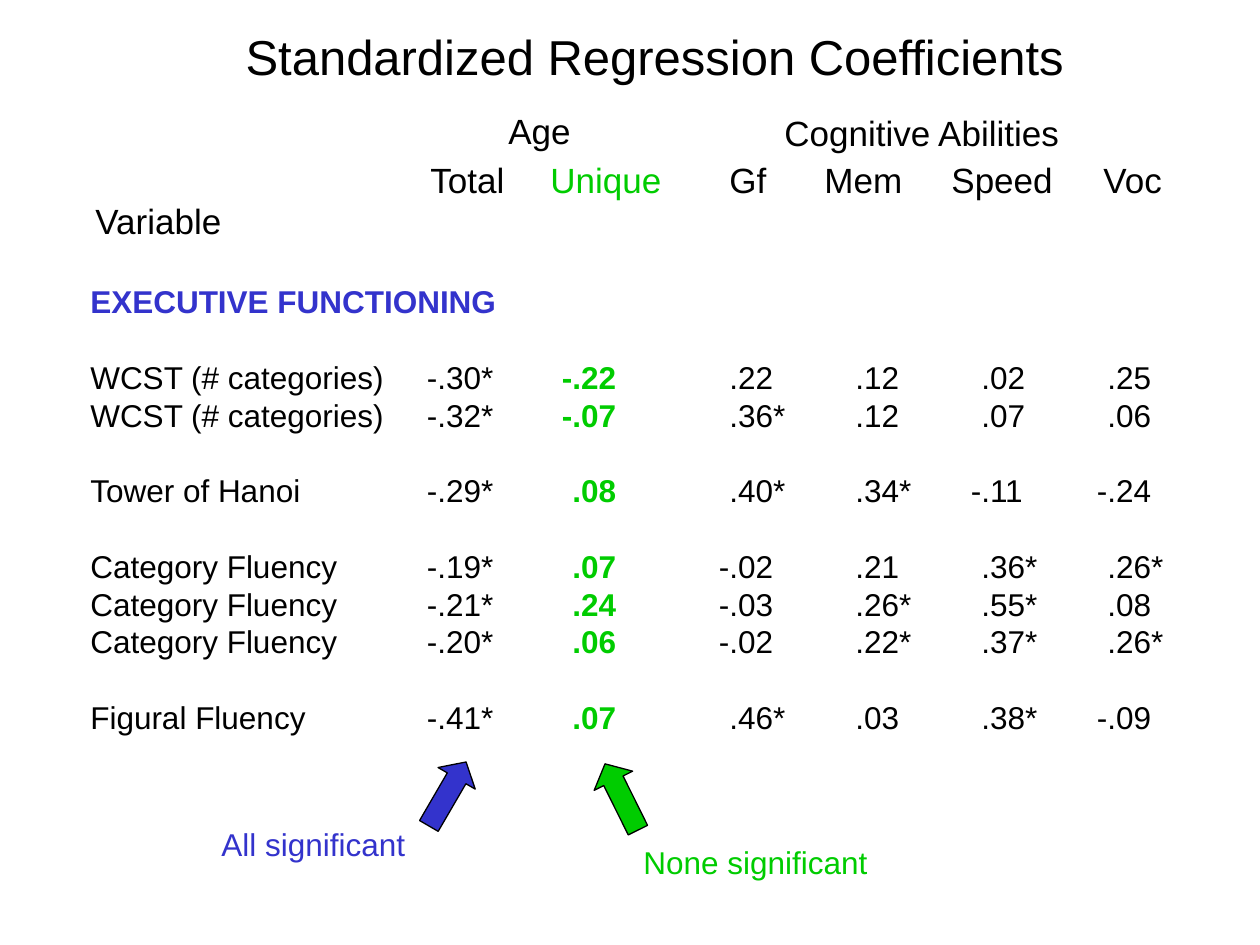
from dataclasses import dataclass

from lxml import etree
from pptx import Presentation
from pptx.dml.color import RGBColor
from pptx.enum.shapes import MSO_SHAPE
from pptx.enum.text import MSO_ANCHOR, MSO_AUTO_SIZE, PP_ALIGN
from pptx.oxml.ns import qn
from pptx.util import Pt

UP_ARROW = MSO_SHAPE.UP_ARROW
TOP = MSO_ANCHOR.TOP
NO_AUTOFIT = MSO_AUTO_SIZE.NONE
LEFT = PP_ALIGN.LEFT
EMU_PER_PX = 914400 / 126


@dataclass(frozen=True)
class Theme:
    font: str = "Arial"
    black: RGBColor = RGBColor(0, 0, 0)
    blue: RGBColor = RGBColor(0x33, 0x33, 0xCC)
    green: RGBColor = RGBColor(0, 0xCC, 0)
    title_size: int = 28
    header_size: int = 20
    body_size: int = 18
    leading: float = 1.2


THEME = Theme()


def px(count):
    return round(count * EMU_PER_PX)


def write_line(paragraph, pieces, size, stops=(), tab_align="l"):
    """Fill a paragraph with (text, colour, bold) pieces and set its tab stops."""
    paragraph.alignment = LEFT
    paragraph.line_spacing = Pt(size * THEME.leading)
    if stops:
        tab_list = etree.SubElement(paragraph._p.get_or_add_pPr(), qn("a:tabLst"))
        for stop in stops:
            etree.SubElement(tab_list, qn("a:tab"), pos=str(px(stop)), algn=tab_align)
    for text, color, bold in pieces:
        run = paragraph.add_run()
        run.text = text
        run.font.name = THEME.font
        run.font.size = Pt(size)
        run.font.bold = bold
        run.font.color.rgb = color


prs = Presentation()
prs.slide_width, prs.slide_height = px(1260), px(945)
slide = prs.slides.add_slide(prs.slide_layouts[5])

# Title
title = slide.shapes.title
title.left, title.top, title.width, title.height = px(233), px(20), px(847), px(72)
title.text_frame.vertical_anchor = TOP
title.text_frame.auto_size = NO_AUTOFIT
title.text_frame.word_wrap = False
write_line(title.text_frame.paragraphs[0],
           [("Standardized Regression Coefficients", THEME.black, False)],
           THEME.title_size)

# Coefficients: one line per measure, values aligned on the decimal point
measures = [
    [("WCST (# categories)", "-.30*", "-.22", ".22", ".12", ".02", ".25"),
     ("WCST (# categories)", "-.32*", "-.07", ".36*", ".12", ".07", ".06")],
    [("Tower of Hanoi", "-.29*", ".08", ".40*", ".34*", "-.11", "-.24")],
    [("Category Fluency", "-.19*", ".07", "-.02", ".21", ".36*", ".26*"),
     ("Category Fluency", "-.21*", ".24", "-.03", ".26*", ".55*", ".08"),
     ("Category Fluency", "-.20*", ".06", "-.02", ".22*", ".37*", ".26*")],
    [("Figural Fluency", "-.41*", ".07", ".46*", ".03", ".38*", "-.09")],
]
value_stops = [347, 482] + [639 + 126 * ability for ability in range(4)]

coefficients = slide.shapes.add_textbox(px(78), px(276), px(1099), px(466)).text_frame
coefficients.word_wrap = False
write_line(coefficients.paragraphs[0],
           [("EXECUTIVE FUNCTIONING", THEME.blue, True)], THEME.body_size)
for group in measures:
    for index, (measure, total, unique, *abilities) in enumerate(group):
        line = coefficients.add_paragraph()
        if index == 0:
            line.space_before = Pt(THEME.body_size * THEME.leading)
        write_line(line, [
            (f"{measure}\t{total}\t", THEME.black, False),
            (unique, THEME.green, True),
            ("\t" + "\t".join(abilities), THEME.black, False),
        ], THEME.body_size, value_stops, "dec")

# Column headings and notes
column_heads = [("Total\t", THEME.black, False), ("Unique", THEME.green, False),
                ("\tGf\tMem\tSpeed\tVoc", THEME.black, False)]
labels = [
    ((83, 193, 154, 54), [("Variable", THEME.black, False)], THEME.header_size, ()),
    ((418, 152, 760, 54), column_heads, THEME.header_size, (120, 299, 394, 521, 673)),
    ((496, 103, 88, 54), [("Age", THEME.black, False)], THEME.header_size, ()),
    ((772, 105, 302, 54), [("Cognitive Abilities", THEME.black, False)],
     THEME.header_size, ()),
    ((209, 819, 209, 50), [("All significant", THEME.blue, False)],
     THEME.body_size, ()),
    ((631, 837, 249, 50), [("None significant", THEME.green, False)],
     THEME.body_size, ()),
]
for box, pieces, size, stops in labels:
    label = slide.shapes.add_textbox(*map(px, box)).text_frame
    label.word_wrap = False
    write_line(label.paragraphs[0], pieces, size, stops)

# Arrows from the notes to the Total and Unique columns
for left, top, angle, color in [(600, 760, 333.6, THEME.green),
                                (426, 757, 30.2, THEME.blue)]:
    arrow = slide.shapes.add_shape(UP_ARROW, px(left), px(top), px(43), px(74))
    arrow.adjustments[0] = 0.5
    arrow.adjustments[1] = 0.44
    arrow.rotation = angle
    arrow.shadow.inherit = False
    arrow.fill.solid()
    arrow.fill.fore_color.rgb = color
    arrow.line.color.rgb = THEME.black
    arrow.line.width = Pt(0.75)

prs.save("out.pptx")
